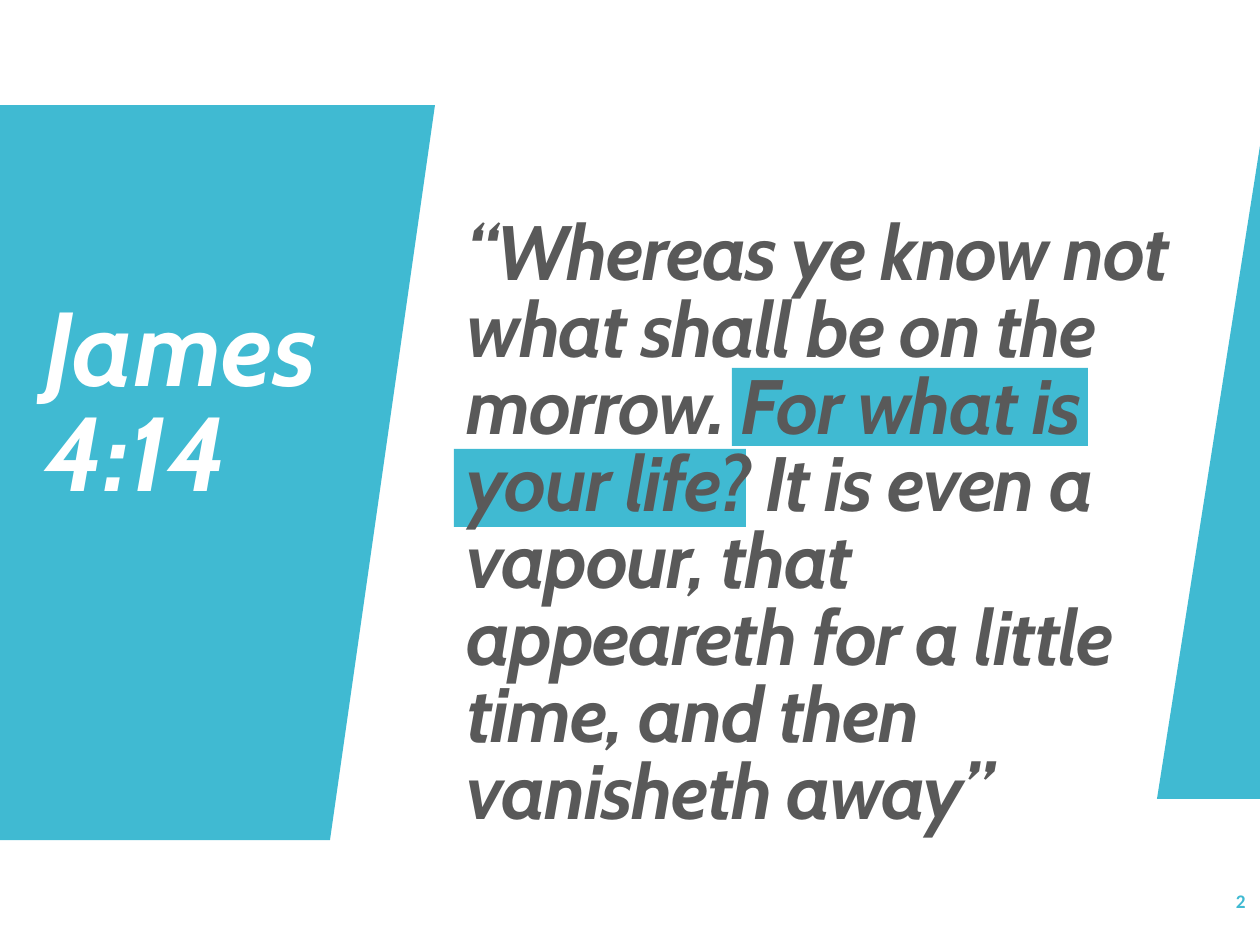
from pptx import Presentation
from pptx.dml.color import RGBColor
from pptx.enum.shapes import MSO_SHAPE as Shape
from pptx.enum.text import MSO_ANCHOR as Anchor, MSO_AUTO_SIZE as AutoSize, PP_ALIGN as Align
from pptx.util import Emu, Pt

EMU_PER_PX = 914400 / 126
COLORS = {"accent": "40BAD2", "text": "595959", "white": "FFFFFF"}
VERSE = (
    "“Whereas ye know not what shall be on the morrow. For what is your life? "
    "It is even a vapour, that appeareth for a little time, and then vanisheth away”"
)


def px(length):
    return Emu(round(length * EMU_PER_PX))


def color(name):
    return RGBColor.from_string(COLORS[name])


def paint(shape):
    """Give a shape the plain accent fill, with no outline or shadow."""
    shape.fill.solid()
    shape.fill.fore_color.rgb = color("accent")
    shape.line.fill.background()
    shape.shadow.inherit = False


def add_panel(slide, points):
    builder = slide.shapes.build_freeform(*points[0], scale=EMU_PER_PX)
    builder.add_line_segments(points[1:], close=True)
    paint(builder.convert_to_shape())


def add_highlight(slide, *box):
    paint(slide.shapes.add_shape(Shape.RECTANGLE, *map(px, box)))


def write(shape, text, size, font, color_name, italic=False, line_spacing=None,
          align=Align.LEFT, anchor=Anchor.TOP, tracking=0):
    """Fill a shape with one bold paragraph; tracking is in hundredths of a point."""
    frame = shape.text_frame
    frame.text = text
    frame.word_wrap = True
    frame.auto_size = AutoSize.NONE
    frame.vertical_anchor = anchor
    paragraph = frame.paragraphs[0]
    paragraph.alignment = align
    if line_spacing:
        paragraph.line_spacing = Pt(line_spacing)
    run = paragraph.runs[0]
    run.font.size = Pt(size)
    run.font.name = font
    run.font.bold = True
    run.font.italic = italic
    run.font.color.rgb = color(color_name)
    if tracking:
        run.font._element.set("spc", str(tracking))


def add_text(slide, box, text, **style):
    write(slide.shapes.add_textbox(*map(px, box)), text, **style)


def set_title(slide, box, text, **style):
    """Place the title placeholder in front of everything drawn so far."""
    title = slide.shapes.title
    title.left, title.top, title.width, title.height = map(px, box)
    write(title, text, **style)
    slide.shapes._spTree.append(title._element)


def main():
    presentation = Presentation()
    presentation.slide_width, presentation.slide_height = px(1260), px(945)
    slide = presentation.slides.add_slide(presentation.slide_layouts[5])

    add_panel(slide, [(330, 840), (0, 840), (0, 105), (435, 105)])
    add_panel(slide, [(1260, 799), (1157, 799), (1260, 146)])

    add_text(slide, (32, 296, 338, 227), "James 4:14", size=60, font="Cabin",
             color_name="white", italic=True, line_spacing=60)
    add_text(slide, (1099, 876, 159, 50), "2", size=11, font="Calibri",
             color_name="accent", align=Align.RIGHT, anchor=Anchor.MIDDLE)

    add_highlight(slide, 732, 368, 356, 78)
    add_highlight(slide, 454, 449, 292, 78)
    set_title(slide, (454, 213, 743, 620), VERSE, size=44, font="Cabin",
              color_name="text", italic=True, line_spacing=44, tracking=-100)

    presentation.save("out.pptx")


if __name__ == "__main__":
    main()
